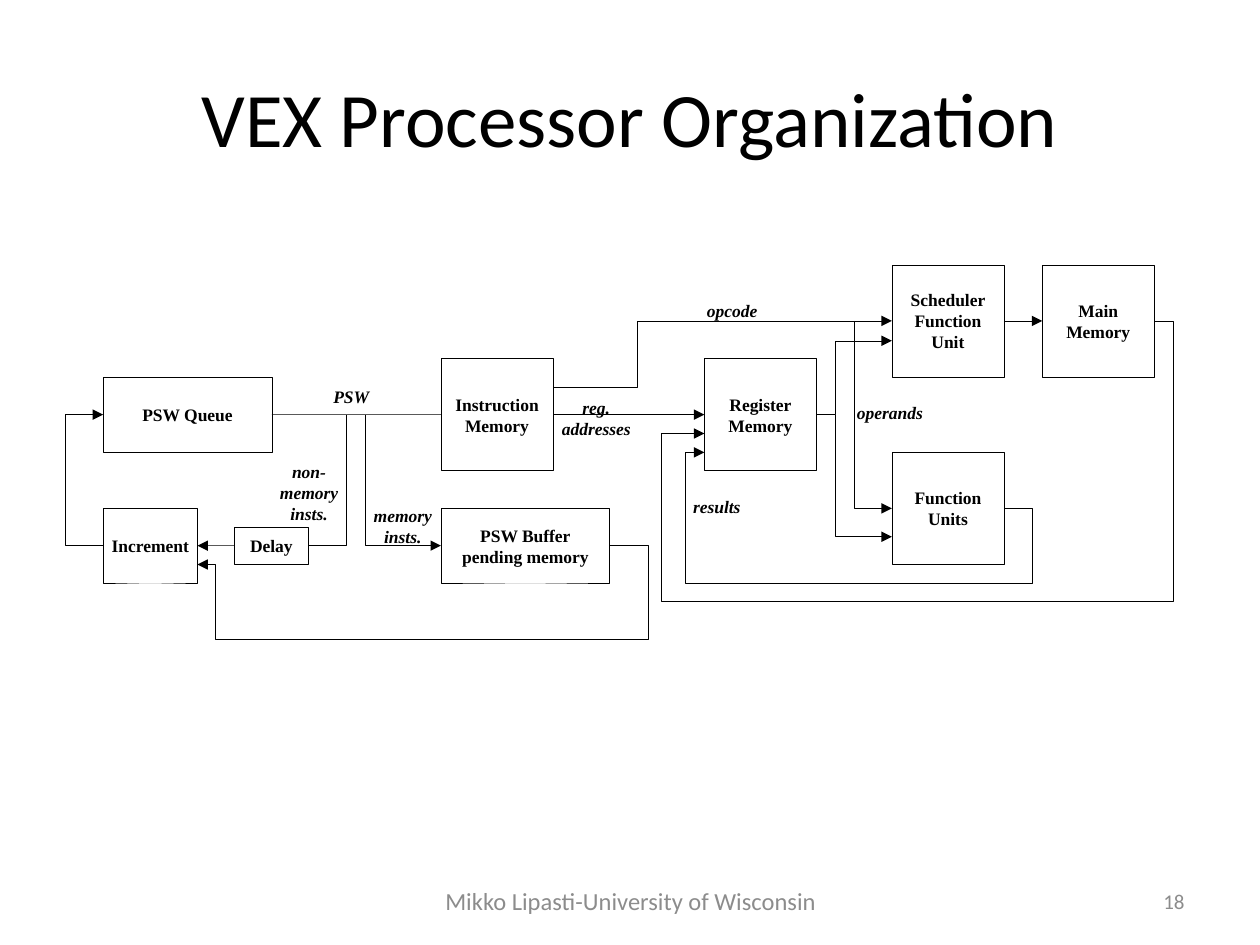
"""Build the VEX Processor Organization slide."""
from pptx import Presentation, util as u
from pptx.dml.color import RGBColor
from pptx.enum import shapes, text
from pptx.oxml.ns import qn
from lxml import etree

COLORS = {"ink": "000000", "box": "FFFFFF", "footer": "8C8C8C"}
RGB = {k: RGBColor.from_string(v) for k, v in COLORS.items()}
CENTER, RIGHT = text.PP_ALIGN.CENTER, text.PP_ALIGN.RIGHT


def write(s, content, size, font="Times New Roman", color="ink", align=CENTER,
          bold=False, italic=False, inset=None, wrap=True):
    tf = s.text_frame
    tf.word_wrap = wrap
    tf.vertical_anchor = text.MSO_ANCHOR.MIDDLE
    if inset is not None:
        tf.margin_left = tf.margin_right = tf.margin_top = tf.margin_bottom = u.Cm(inset)
    for i, row in enumerate(content.split("\n")):
        p = tf.add_paragraph() if i else tf.paragraphs[0]
        p.text = row
        p.alignment = align
        p.font.name, p.font.size = font, u.Pt(size)
        p.font.bold, p.font.italic = bold, italic
        p.font.color.rgb = RGB[color]


def draw_line(s, arrow):
    s.line.color.rgb = RGB["ink"]
    s.line.width = u.Pt(0.25)
    if arrow:
        etree.SubElement(s.line._get_or_add_ln(), qn("a:tailEnd"), type="triangle")


prs = Presentation()
prs.slide_width, prs.slide_height = u.Cm(25.4), u.Cm(19.05)
slide = prs.slides.add_slide(prs.slide_layouts[6])

captions = [
    ("VEX Processor Organization", 1.27, 0.76, 22.86, 3.18, 44, "ink", CENTER),
    ("Mikko Lipasti-University of Wisconsin", 8.69, 17.65, 8.05, 1.02, 14, "footer", CENTER),
    ("18", 18.21, 17.65, 5.92, 1.02, 12, "footer", RIGHT),
]
for content, x, y, w, h, size, color, align in captions:
    s = slide.shapes.add_textbox(u.Cm(x), u.Cm(y), u.Cm(w), u.Cm(h))
    write(s, content, size, "Calibri", color, align)

SIDE = 2.26
boxes = {
    "queue": ("PSW Queue", 2.08, 7.6, 3.4, 1.52),
    "instructions": ("Instruction\nMemory", 8.89, 7.23, SIDE, SIDE),
    "registers": ("Register\nMemory", 14.2, 7.23, SIDE, SIDE),
    "functions": ("Function\nUnits", 17.98, 9.12, SIDE, SIDE),
    "scheduler": ("Scheduler\nFunction\nUnit", 17.98, 5.34, SIDE, SIDE),
    "main": ("Main\nMemory", 21.01, 5.34, SIDE, SIDE),
    "buffer": ("PSW Buffer\npending memory", 8.89, 10.25, 3.4, 1.5),
    "increment": ("Increment", 2.08, 10.25, 1.9, 1.5),
    "delay": ("Delay", 4.72, 10.62, 1.5, 0.76),
}
nodes = {}
for name, (content, x, y, w, h) in boxes.items():
    s = slide.shapes.add_shape(shapes.MSO_SHAPE.RECTANGLE, u.Cm(x), u.Cm(y), u.Cm(w), u.Cm(h))
    s.shadow.inherit = False
    s.fill.solid()
    s.fill.fore_color.rgb = RGB["box"]
    draw_line(s, False)
    write(s, content, 10, bold=True, inset=0)
    nodes[name] = s

links = [
    ("queue", 3, "instructions", 1, False),
    ("instructions", 3, "registers", 1, True),
    ("scheduler", 3, "main", 1, True),
    ("delay", 1, "increment", 3, True),
]
for start, start_side, end, end_side, arrow in links:
    s = slide.shapes.add_connector(shapes.MSO_CONNECTOR.STRAIGHT, 0, 0, 0, 0)
    s.begin_connect(nodes[start], start_side)
    s.end_connect(nodes[end], end_side)
    draw_line(s, arrow)
    etree.SubElement(s._element.spPr, qn("a:effectLst"))

routes = [
    ([(6.98, 8.36), (6.98, 11), (6.22, 11)], False),
    ([(2.08, 11), (1.32, 11), (1.32, 8.36), (2.08, 8.36)], True),
    ([(7.37, 8.36), (7.37, 11), (8.89, 11)], True),
    ([(12.29, 11), (13.06, 11), (13.06, 12.88), (4.34, 12.88), (4.34, 11.38), (3.98, 11.38)], True),
    ([(11.15, 7.8), (12.85, 7.8), (12.85, 6.47), (17.98, 6.47)], True),
    ([(17.22, 6.47), (17.22, 10.25), (17.98, 10.25)], True),
    ([(23.27, 6.47), (23.65, 6.47), (23.65, 12.12), (13.34, 12.12), (13.34, 8.74), (14.2, 8.74)], True),
    ([(16.46, 8.36), (16.84, 8.36), (16.84, 6.87), (17.98, 6.87)], True),
    ([(16.84, 8.36), (16.84, 10.82), (17.98, 10.82)], True),
    ([(20.24, 10.25), (20.8, 10.25), (20.8, 11.75), (13.82, 11.75), (13.82, 9.12), (14.2, 9.12)], True),
]
for points, arrow in routes:
    points = [(u.Cm(x), u.Cm(y)) for x, y in points]
    builder = slide.shapes.build_freeform(*points[0])
    builder.add_line_segments(points[1:], close=False)
    s = builder.convert_to_shape()
    s.shadow.inherit = False
    s.fill.background()
    draw_line(s, arrow)

ROW = 0.4
labels = [
    ("PSW", 7.08, 7.79, 0.82),
    ("memory\ninsts.", 8.12, 10.2, 1.37),
    ("non-\nmemory\ninsts.", 6.23, 9.32, 1.37),
    ("opcode", 14.76, 6.06, 1.24),
    ("reg.\naddresses", 12.02, 8.02, 1.73),
    ("operands", 17.94, 8.12, 1.57),
    ("results", 14.45, 10.02, 1.14),
]
for content, center, y, w in labels:
    h = ROW * len(content.split("\n"))
    s = slide.shapes.add_textbox(u.Cm(center - w / 2), u.Cm(y), u.Cm(w), u.Cm(h))
    write(s, content, 10, bold=True, italic=True, inset=0, wrap=False)

prs.save("out.pptx")
